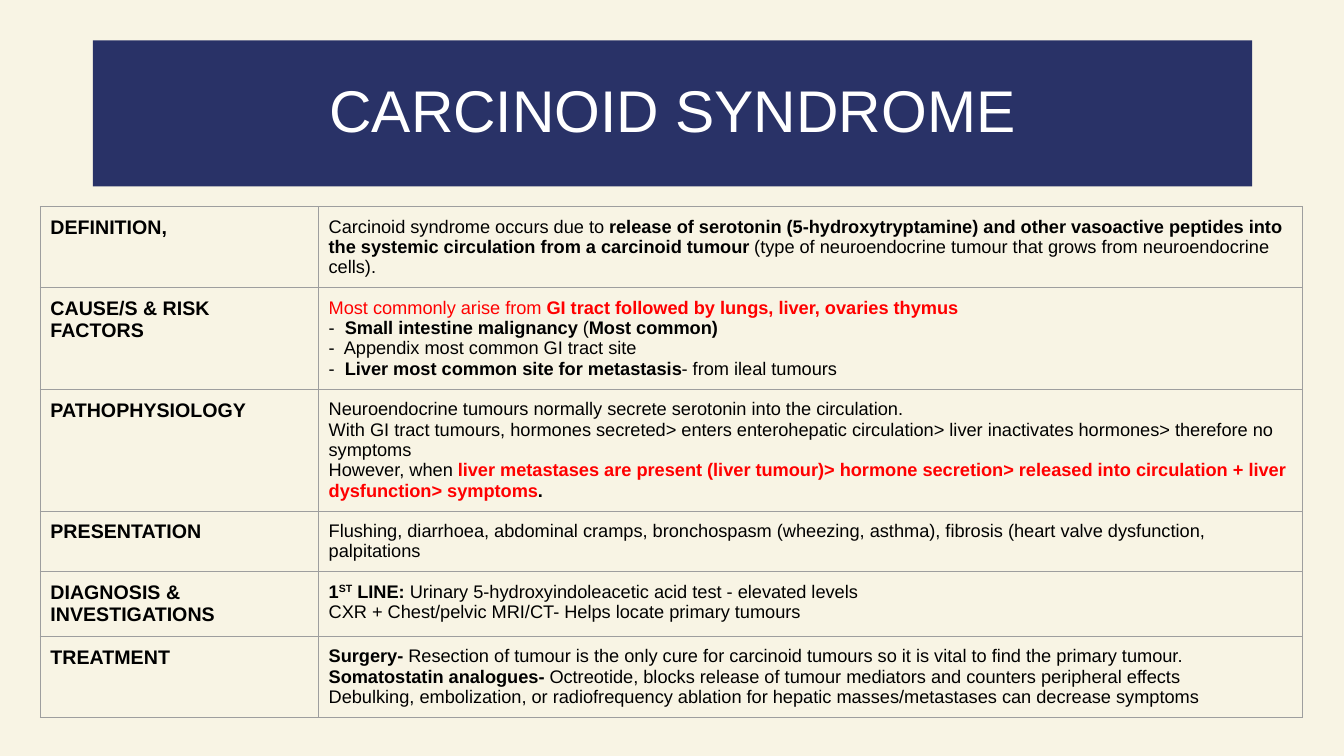
from lxml import etree
from pptx import Presentation
from pptx.dml.color import RGBColor
from pptx.enum import text
from pptx.oxml import ns
from pptx.util import Inches, Pt

COLORS = {"cream": "F8F4E4", "navy": "293267", "white": "FFFFFF",
          "black": "000000", "red": "FF0000", "border": "9E9E9E"}
STYLES = {"plain": (False, "black"), "bold": (True, "black"),
          "red": (False, "red"), "redbold": (True, "red"),
          "super": (True, "black")}
ROWS = [
    (0.73, "DEFINITION,", [
        [("Carcinoid syndrome occurs due to ", "plain"),
         ("release of serotonin (5-hydroxytryptamine) and other vasoactive peptides "
          "into the systemic circulation from a carcinoid tumour ", "bold"),
         ("(type of neuroendocrine tumour that grows from neuroendocrine cells).", "plain")]]),
    (0.88, "CAUSE/S & RISK FACTORS", [
        [("Most commonly arise from ", "red"),
         ("GI tract followed by lungs, liver, ovaries thymus", "redbold")],
        [("-  ", "plain"), ("Small intestine malignancy ", "bold"),
         ("(", "plain"), ("Most common)", "bold")],
        [("-  Appendix most common GI tract site", "plain")],
        [("-  ", "plain"), ("Liver most common site for metastasis", "bold"),
         ("- from ileal tumours", "plain")]]),
    (0.88, "PATHOPHYSIOLOGY", [
        [("Neuroendocrine tumours normally secrete serotonin into the circulation.", "plain")],
        [("With GI tract tumours, hormones secreted> enters enterohepatic circulation> "
          "liver inactivates hormones> therefore no symptoms", "plain")],
        [("However, when ", "plain"),
         ("liver metastases are present (liver tumour)> hormone secretion> "
          "released into circulation + liver dysfunction> symptoms", "redbold"),
         (".", "bold")]]),
    (0.57, "PRESENTATION", [
        [("Flushing, diarrhoea, abdominal cramps, bronchospasm (wheezing, asthma), "
          "fibrosis (heart valve dysfunction, palpitations", "plain")]]),
    (0.6, "DIAGNOSIS & INVESTIGATIONS", [
        [("1", "bold"), ("ST", "super"), (" LINE: ", "bold"),
         ("Urinary 5-hydroxyindoleacetic acid test - elevated levels", "plain")],
        [("CXR + Chest/pelvic MRI/CT- Helps locate primary tumours", "plain")]]),
    (0.57, "TREATMENT", [
        [("Surgery- ", "bold"),
         ("Resection of tumour is the only cure for carcinoid tumours "
          "so it is vital to find the primary tumour.", "plain")],
        [("Somatostatin analogues- ", "bold"),
         ("Octreotide, blocks release of tumour mediators "
          "and counters peripheral effects", "plain")],
        [("Debulking, embolization, or radiofrequency ablation "
          "for hepatic masses/metastases can decrease symptoms", "plain")]]),
]


def rgb(name):
    return RGBColor.from_string(COLORS[name])


def fill_cell(cell, paragraphs, size):
    cell.margin_left = cell.margin_right = Inches(0.1)
    cell.margin_top = cell.margin_bottom = Inches(0.1)
    tf = cell.text_frame
    for i, runs in enumerate(paragraphs):
        p = tf.add_paragraph() if i else tf.paragraphs[0]
        for words, style in runs:
            r = p.add_run()
            r.text = words
            bold, color = STYLES[style]
            r.font.name, r.font.size, r.font.bold = "Arial", Pt(size), bold
            r.font.color.rgb = rgb(color)
            if style == "super":
                r._r.get_or_add_rPr().set("baseline", "30000")
    tcPr = cell._tc.get_or_add_tcPr()
    for side in ("lnL", "lnR", "lnT", "lnB"):
        ln = etree.SubElement(tcPr, ns.qn(f"a:{side}"), w=str(Pt(0.75)))
        solid = etree.SubElement(ln, ns.qn("a:solidFill"))
        etree.SubElement(solid, ns.qn("a:srgbClr"), val=COLORS["border"])
    cell.fill.background()


prs = Presentation()
prs.slide_width, prs.slide_height = Inches(13.33), Inches(7.5)
s = prs.slides.add_slide(prs.slide_layouts[5])
s.background.fill.solid()
s.background.fill.fore_color.rgb = rgb("cream")

title = s.shapes.title
title.left, title.top = Inches(0.92), Inches(0.4)
title.width, title.height = Inches(11.5), Inches(1.45)
title.fill.solid()
title.fill.fore_color.rgb = rgb("navy")
tf = title.text_frame
tf.text = "CARCINOID SYNDROME"
tf.auto_size = text.MSO_AUTO_SIZE.NONE
tf.vertical_anchor = text.MSO_ANCHOR.MIDDLE
p = tf.paragraphs[0]
p.alignment = text.PP_ALIGN.CENTER
p.line_spacing = 0.9
r = p.runs[0]
r.font.name, r.font.size = "Arial", Pt(42)
r.font.color.rgb = rgb("white")

table = s.shapes.add_table(len(ROWS), 2, Inches(0.4), Inches(2.05),
                           Inches(12.52), Inches(4.23)).table
table.first_row = table.horz_banding = False
table.columns[0].width, table.columns[1].width = Inches(2.76), Inches(9.76)
for i, (height, heading, paragraphs) in enumerate(ROWS):
    table.rows[i].height = Inches(height)
    fill_cell(table.cell(i, 0), [[(heading, "bold")]], 14)
    fill_cell(table.cell(i, 1), paragraphs, 13)

prs.save("out.pptx")
